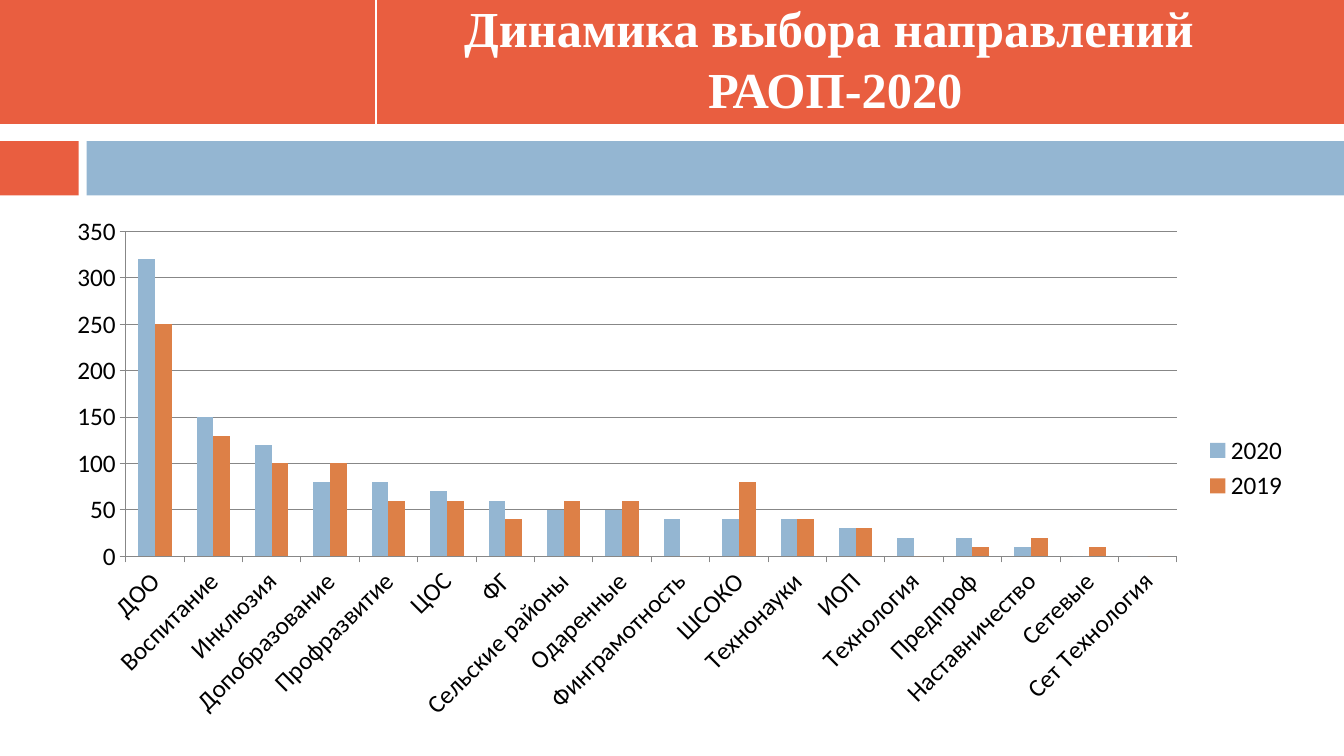
from lxml import etree
from pptx import Presentation
from pptx.chart.data import CategoryChartData
from pptx.dml.color import RGBColor
from pptx.enum.chart import XL_CHART_TYPE as Kind, XL_LEGEND_POSITION as Side, XL_TICK_MARK as Tick
from pptx.enum.shapes import MSO_CONNECTOR as Link, MSO_SHAPE as Shape
from pptx.enum.text import MSO_ANCHOR as Anchor, PP_ALIGN as Align
from pptx.oxml.ns import qn
from pptx.util import Inches, Pt

WHITE = RGBColor(0xFF, 0xFF, 0xFF)
BLACK = RGBColor(0, 0, 0)
RED = RGBColor(0xE9, 0x5E, 0x40)
BLUE = RGBColor(0x94, 0xB6, 0xD2)
ORANGE = RGBColor(0xDD, 0x80, 0x47)
GREY = RGBColor(0x87, 0x87, 0x87)

TITLE = "Динамика выбора направлений \vРАОП-2020"
TITLE_FONT = {"name": "Times New Roman", "size": Pt(36), "bold": True}
CHART_FONT = {"name": "Calibri", "size": Pt(18)}

BANDS = [  # left, top, width, height, colour
    (0, 0, 13.33, 1.23, RED),
    (0, 1.35, 13.33, 0.35, WHITE),
    (0, 1.4, 0.78, 0.54, RED),
    (0.86, 1.4, 12.47, 0.54, BLUE),
]

ROWS = [  # direction, 2020, 2019
    ("ДОО", 320, 250),
    ("Воспитание", 150, 130),
    ("Инклюзия", 120, 100),
    ("Допобразование", 80, 100),
    ("Профразвитие", 80, 60),
    ("ЦОС", 70, 60),
    ("ФГ", 60, 40),
    ("Сельские районы", 50, 60),
    ("Одаренные", 50, 60),
    ("Финграмотность", 40, 0),
    ("ШСОКО", 40, 80),
    ("Технонауки", 40, 40),
    ("ИОП", 30, 30),
    ("Технология", 20, 0),
    ("Предпроф", 20, 10),
    ("Наставничество", 10, 20),
    ("Сетевые", 0, 10),
    ("Сет Технология", 0, 0),
]
SERIES = [("2020", BLUE), ("2019", ORANGE)]


def style(font, form, color):
    for key, val in form.items():
        setattr(font, key, val)
    font.color.rgb = color


def add_bands(slide):
    for *box, color in BANDS:
        band = slide.shapes.add_shape(Shape.RECTANGLE, *map(Inches, box))
        band.shadow.inherit = False
        band.fill.solid()
        band.fill.fore_color.rgb = color
        band.line.fill.background()
    x = Inches(3.73)
    rule = slide.shapes.add_connector(Link.STRAIGHT, x, 0, x, Inches(1.23))
    rule.line.color.rgb = WHITE
    rule.line.width = Pt(1.5)
    etree.SubElement(rule._element.spPr, qn("a:effectLst"))


def add_title(slide):
    box = slide.shapes.add_textbox(*map(Inches, (3.79, 0, 8.99, 1.15)))
    frame = box.text_frame
    frame.word_wrap = True
    frame.vertical_anchor = Anchor.MIDDLE
    para = frame.paragraphs[0]
    para.text = TITLE
    para.alignment = Align.CENTER
    for run in para.runs:
        style(run.font, TITLE_FONT, WHITE)


def add_bars(slide):
    names, *cols = zip(*ROWS)
    data = CategoryChartData()
    data.categories = names
    for (year, _), vals in zip(SERIES, cols):
        data.add_series(year, vals)
    box = map(Inches, (0.52, 2.04, 12.36, 5.21))
    chart = slide.shapes.add_chart(Kind.COLUMN_CLUSTERED, *box, data).chart
    style(chart.font, CHART_FONT, BLACK)
    chart.has_title = False
    chart.has_legend = True
    chart.legend.position = Side.RIGHT
    chart.legend.include_in_layout = False

    plot = chart.plots[0]
    plot.gap_width = 150
    plot.overlap = 0
    plot.vary_by_categories = False
    for bars, (_, color) in zip(plot.series, SERIES):
        bars.format.fill.solid()
        bars.format.fill.fore_color.rgb = color

    cat, val = chart.category_axis, chart.value_axis
    for axis in (cat, val):
        axis.major_tick_mark = Tick.OUTSIDE
        axis.minor_tick_mark = Tick.NONE
        axis.format.line.color.rgb = GREY
        style(axis.tick_labels.font, CHART_FONT, BLACK)
    val.minimum_scale, val.maximum_scale, val.major_unit = 0, 350, 50
    val.has_major_gridlines = True
    val.major_gridlines.format.line.color.rgb = GREY


def main():
    deck = Presentation()
    deck.slide_width, deck.slide_height = Inches(13.33), Inches(7.5)
    slide = deck.slides.add_slide(deck.slide_layouts[6])
    add_bands(slide)
    add_title(slide)
    add_bars(slide)
    deck.save("out.pptx")


if __name__ == "__main__":
    main()
